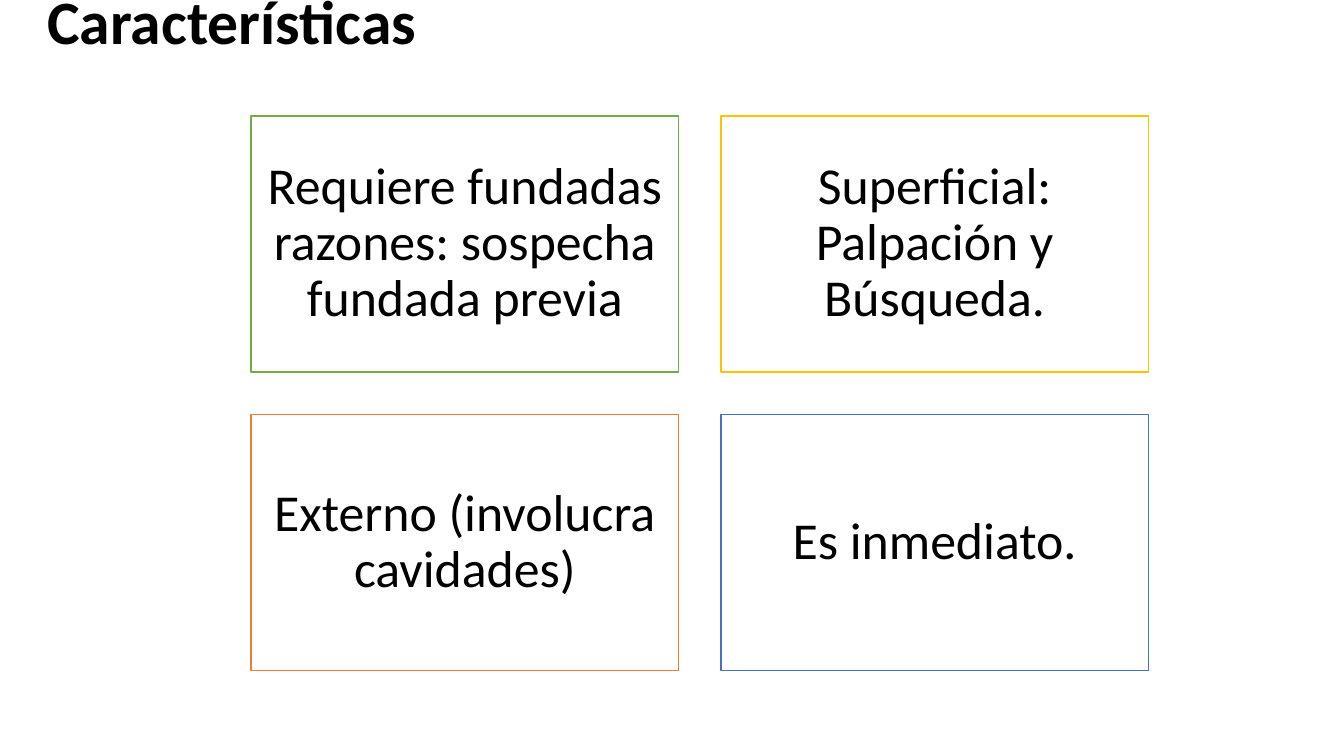
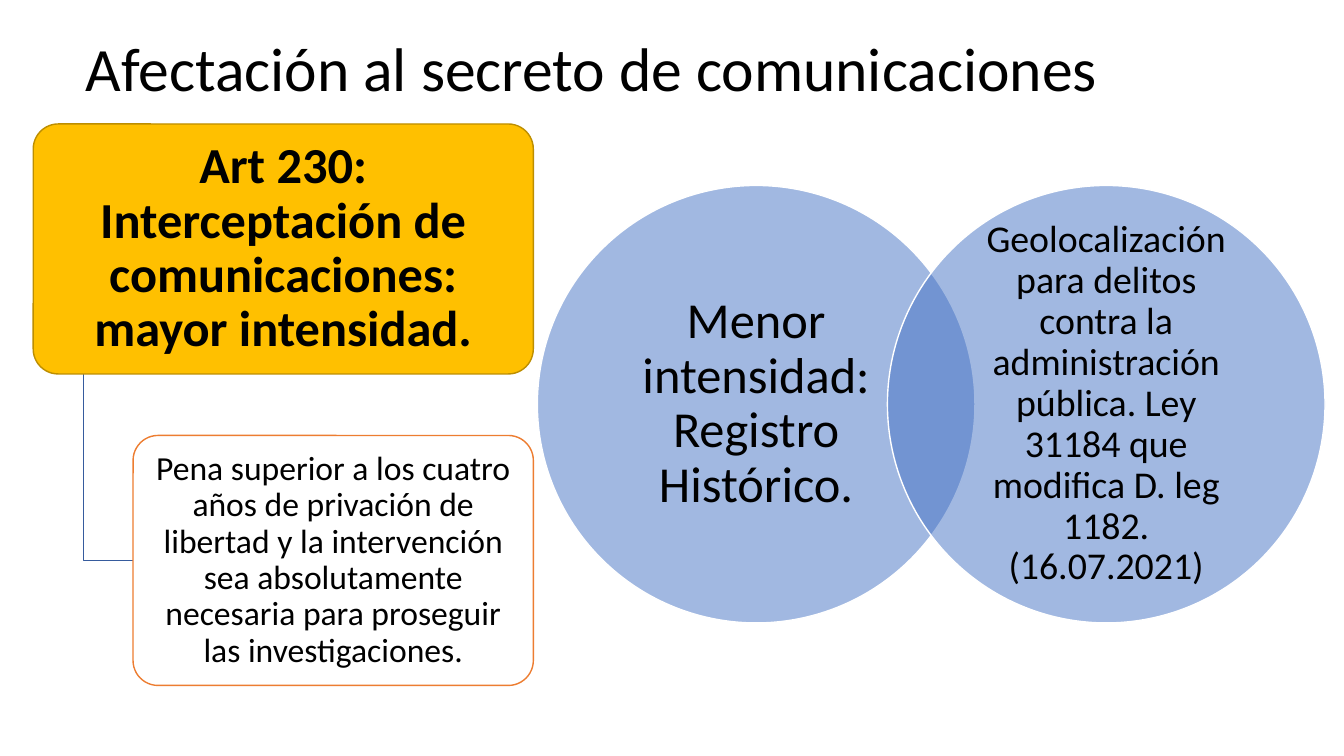
from lxml.etree import SubElement
from pptx import Presentation
from pptx.dml.color import RGBColor
from pptx.enum.shapes import MSO_SHAPE as SHAPE
from pptx.enum.text import MSO_ANCHOR as ANCHOR, MSO_AUTO_SIZE as AUTO, PP_ALIGN as ALIGN
from pptx.oxml.ns import qn
from pptx.util import Inches, Pt

COLORS = {
    "black": "000000", "white": "FFFFFF", "blue": "4472C4", "orange": "ED7D31",
    "gold": "FFC000", "green": "70AD47", "dark_gold": "BD8E00", "dark_blue": "365B9D",
}
FONT = "Calibri"
LINE_SPACING = 0.9

prs = Presentation()
prs.slide_width, prs.slide_height = Inches(13.33), Inches(7.5)


def write(s, text, size, bold=False, align=ALIGN.CENTER, anchor=ANCHOR.MIDDLE, pad=(0.1, 0.05)):
    tf = s.text_frame
    side, edge = Inches(pad[0]), Inches(pad[1])
    frame = {"word_wrap": True, "auto_size": AUTO.NONE, "vertical_anchor": anchor,
             "margin_left": side, "margin_right": side, "margin_top": edge, "margin_bottom": edge}
    for name, value in frame.items():
        setattr(tf, name, value)
    p = tf.paragraphs[0]
    p.alignment, p.line_spacing = align, LINE_SPACING
    r = p.add_run()
    r.text = text
    for name, value in {"name": FONT, "size": Pt(size), "bold": bold}.items():
        setattr(r.font, name, value)
    r.font.color.rgb = RGBColor.from_string(COLORS["black"])


def add_box(sp, kind, box, fill, line):
    s = sp.add_shape(kind, *map(Inches, box))
    s.shadow.inherit = False
    s.fill.solid()
    s.fill.fore_color.rgb = RGBColor.from_string(COLORS[fill])
    s.line.color.rgb = RGBColor.from_string(COLORS[line])
    s.line.width = Pt(1)
    return s


# Slides with their titles
slides = []
for text, left, top, bold in [
    ("Características", 0.37, -0.14, True),
    ("Afectación al secreto de comunicaciones", 0.75, 0.33, False),
]:
    slide = prs.slides.add_slide(prs.slide_layouts[5])
    title = slide.shapes.title
    title.left, title.top, title.width, title.height = map(Inches, (left, top, 11.5, 1.45))
    write(title, text, 44, bold, ALIGN.LEFT, ANCHOR.TOP)
    slides.append(slide)

# Slide 1: two by two grid of features
sp = slides[0].shapes
width, height, gap = 4.24, 2.54, 0.42
features = [
    ("Requiere fundadas razones: sospecha fundada previa", "green"),
    ("Superficial: Palpación y Búsqueda.", "gold"),
    ("Externo (involucra cavidades)", "orange"),
    ("Es inmediato.", "blue"),
]
for i, (text, line) in enumerate(features):
    row, col = divmod(i, 2)
    box = (2.49 + col * (width + gap), 1.15 + row * (height + gap), width, height)
    s = add_box(sp, SHAPE.RECTANGLE, box, "white", line)
    write(s, text, 37, pad=(0.15, 0.15))

# Slide 2: overlapping circles
sp = slides[1].shapes
diameter = 4.34
circles = [
    ("Menor intensidad: Registro Histórico.", 36),
    ("Geolocalización para delitos contra la administración pública. "
     "Ley 31184 que modifica D. leg 1182. (16.07.2021)", 27),
]
for i, (text, size) in enumerate(circles):
    box = (5.33 + i * diameter * 0.8, 1.84, diameter, diameter)
    s = add_box(sp, SHAPE.OVAL, box, "blue", "white")
    fill_color = s.element.find(".//" + qn("a:srgbClr"))
    SubElement(fill_color, qn("a:alpha"), val="50000")
    write(s, text, size, pad=(0.24, 0.05))

# Slide 2: heading card, branch line and detail card
builder = sp.build_freeform(Inches(0.83), Inches(3.7))
builder.add_line_segments([(Inches(0.83), Inches(5.56)), (Inches(1.32), Inches(5.56))], close=False)
branch = builder.convert_to_shape()
branch.shadow.inherit = False
branch.fill.background()
branch.line.color.rgb = RGBColor.from_string(COLORS["dark_blue"])
branch.line.width = Pt(1)

cards = [
    ("Art 230: Interceptación de comunicaciones: mayor intensidad.",
     (0.33, 1.23, 4.96, 2.48), "gold", "dark_gold", 36, True, (0.07, 0.05)),
    ("Pena superior a los cuatro años de privación de libertad y la intervención "
     "sea absolutamente necesaria para proseguir las investigaciones.",
     (1.32, 4.32, 3.97, 2.48), "white", "orange", 24, False, (0.05, 0.03)),
]
for text, box, fill, line, size, bold, pad in cards:
    s = add_box(sp, SHAPE.ROUNDED_RECTANGLE, box, fill, line)
    s.adjustments[0] = 0.1
    write(s, text, size, bold, pad=pad)

prs.save("out.pptx")
